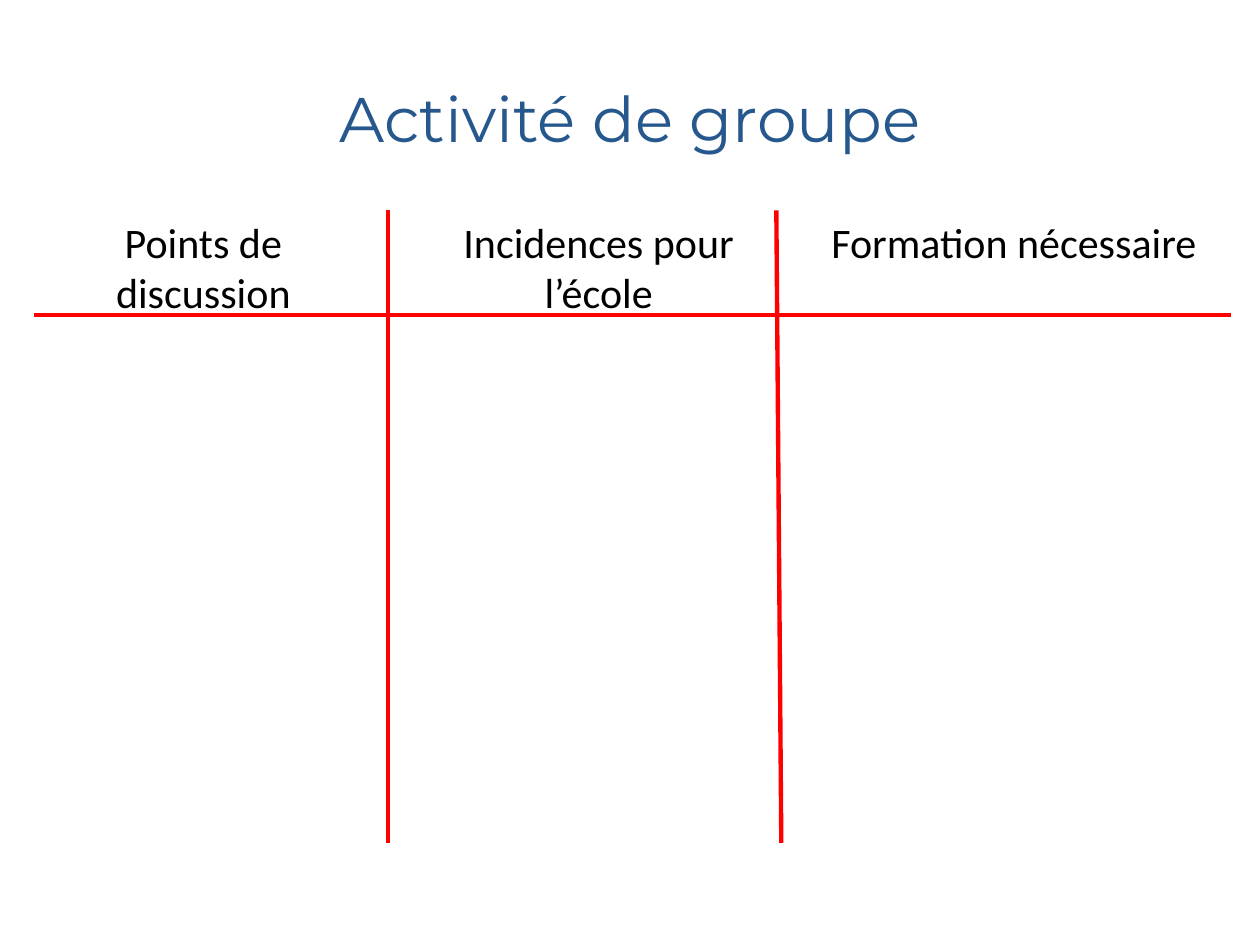
from lxml import etree
from pptx import Presentation
from pptx.dml.color import RGBColor
from pptx.enum.shapes import MSO_CONNECTOR
from pptx.enum.text import PP_ALIGN
from pptx.oxml.ns import qn
from pptx.util import Cm, Pt

COLORS = {"title": "26588D", "text": "000000", "rule": "FF0000"}

# Heading, left offset and width in cm
COLUMNS = [
    ("Points de discussion", 0.02, 6.78),
    ("Incidences pour l’école", 7.67, 7.42),
    ("Formation nécessaire", 14.91, 9.68),
]
# Top and bottom offsets in cm; the second divider leans slightly
DIVIDERS = [(7.13, 7.13), (14.96, 15.06)]
HEADER_HEIGHT = 2.11


def add_text(slide, text, left, top, width, height, font_name, size, color):
    shape = slide.shapes.add_textbox(Cm(left), Cm(top), Cm(width), Cm(height))
    text_frame = shape.text_frame
    text_frame.word_wrap = True
    text_frame.text = text
    paragraph = text_frame.paragraphs[0]
    paragraph.alignment = PP_ALIGN.CENTER
    font = paragraph.runs[0].font
    font.name = font_name
    font.size = Pt(size)
    font.color.rgb = RGBColor.from_string(COLORS[color])


def add_rule(slide, x1, y1, x2, y2):
    connector = slide.shapes.add_connector(
        MSO_CONNECTOR.STRAIGHT, Cm(x1), Cm(y1), Cm(x2), Cm(y2))
    connector.line.color.rgb = RGBColor.from_string(COLORS["rule"])
    connector.line.width = Pt(2.5)
    etree.SubElement(connector._element.spPr, qn("a:effectLst"))


def add_title(slide, left, top, width, height):
    add_text(slide, "Activité de groupe", left, top, width, height,
             "Montserrat", 36, "title")


def add_discussion_grid(slide, left, top, width, height):
    """Draw three headed columns, open for the group's notes."""
    rule_top = top + HEADER_HEIGHT
    add_rule(slide, left, rule_top, left + width, rule_top)
    for top_offset, bottom_offset in DIVIDERS:
        add_rule(slide, left + top_offset, top,
                 left + bottom_offset, top + height)
    for heading, offset, column_width in COLUMNS:
        add_text(slide, heading, left + offset, top, column_width,
                 HEADER_HEIGHT, "Calibri", 24, "text")


def main():
    presentation = Presentation()
    presentation.slide_width = Cm(25.4)
    presentation.slide_height = Cm(19.05)
    slide = presentation.slides.add_slide(presentation.slide_layouts[6])
    add_title(slide, 1.9, 1.47, 21.59, 1.8)
    add_discussion_grid(slide, 0.69, 4.24, 24.13, 12.75)
    presentation.save("out.pptx")


if __name__ == "__main__":
    main()
